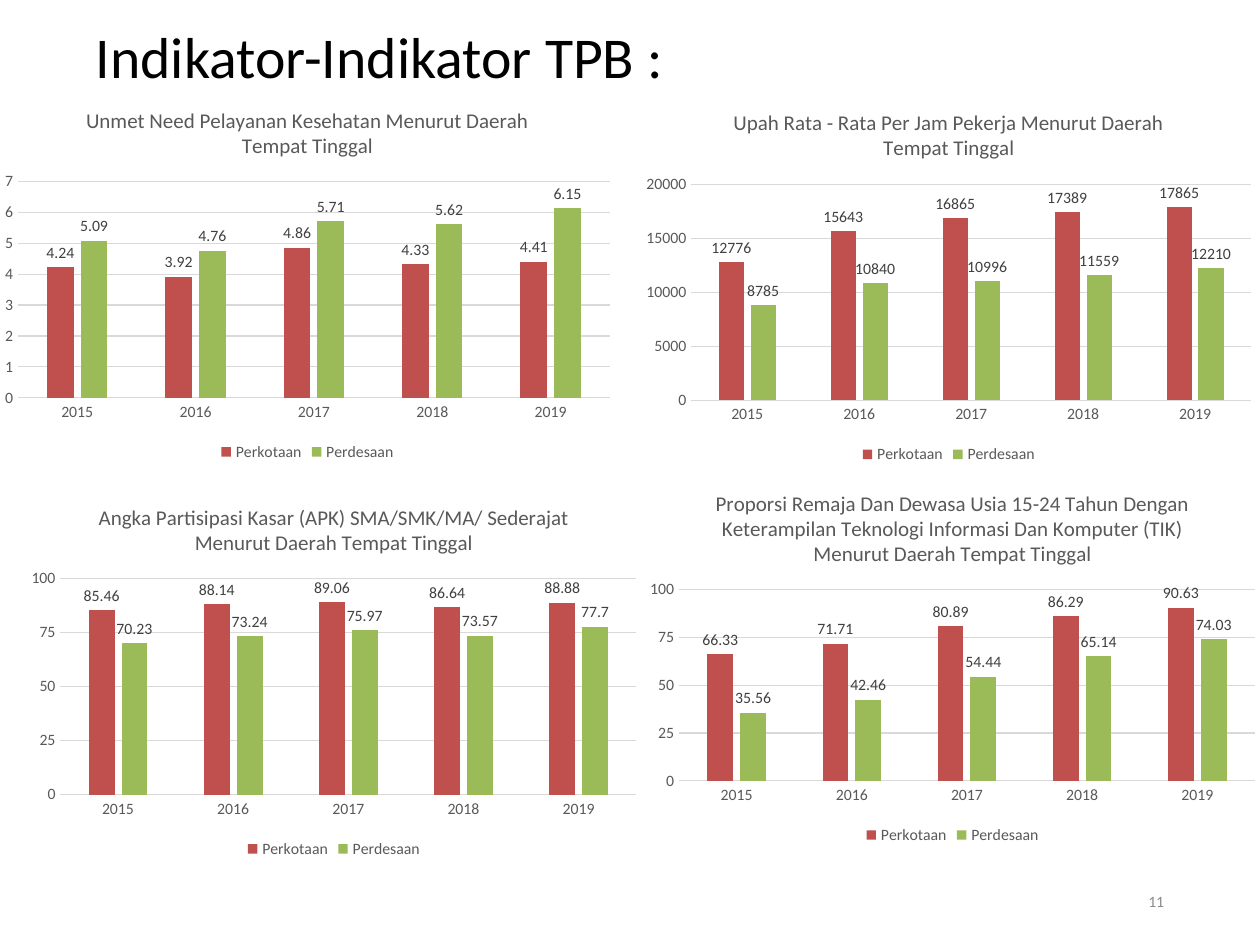
from pptx import Presentation
from pptx.chart.data import CategoryChartData
from pptx.dml.color import RGBColor
from pptx.enum.chart import XL_CHART_TYPE, XL_LABEL_POSITION, XL_LEGEND_POSITION, XL_TICK_MARK
from pptx.enum.text import MSO_ANCHOR, PP_ALIGN
from pptx.util import Inches, Pt

COLUMN_CHART = XL_CHART_TYPE.COLUMN_CLUSTERED
LABEL_OUTSIDE = XL_LABEL_POSITION.OUTSIDE_END
LEGEND_BOTTOM = XL_LEGEND_POSITION.BOTTOM
NO_TICK = XL_TICK_MARK.NONE
MIDDLE = MSO_ANCHOR.MIDDLE
LEFT, RIGHT = PP_ALIGN.LEFT, PP_ALIGN.RIGHT

BLACK = RGBColor(0x00, 0x00, 0x00)
LABEL_GRAY = RGBColor(0x40, 0x40, 0x40)
TEXT_GRAY = RGBColor(0x59, 0x59, 0x59)
NUMBER_GRAY = RGBColor(0x8C, 0x8C, 0x8C)
LINE_GRAY = RGBColor(0xD9, 0xD9, 0xD9)
RED = RGBColor(0xC0, 0x50, 0x4D)
GREEN = RGBColor(0x9B, 0xBB, 0x59)

FONT = "Calibri"
COLUMNS, ROWS = 100, 75
CHART_COLUMNS, CHART_ROWS = 50, 30
YEARS = ["2015", "2016", "2017", "2018", "2019"]
SERIES = [("Perkotaan", RED), ("Perdesaan", GREEN)]

# Column, row, title, axis maximum, axis step, urban values, rural values
CHARTS = [
    (-0.6, 7, "Unmet Need Pelayanan Kesehatan Menurut Daerah Tempat Tinggal", 7, 1,
     [4.24, 3.92, 4.86, 4.33, 4.41], [5.09, 4.76, 5.71, 5.62, 6.15]),
    (50.3, 7.2, "Upah Rata - Rata Per Jam Pekerja Menurut Daerah Tempat Tinggal", 20000, 5000,
     [12776, 15643, 16865, 17389, 17865], [8785, 10840, 10996, 11559, 12210]),
    (50.6, 37.4, "Proporsi Remaja Dan Dewasa Usia 15-24 Tahun Dengan Keterampilan "
     "Teknologi Informasi Dan Komputer (TIK) Menurut Daerah Tempat Tinggal", 100, 25,
     [66.33, 71.71, 80.89, 86.29, 90.63], [35.56, 42.46, 54.44, 65.14, 74.03]),
    (1.5, 38.5, "Angka Partisipasi Kasar (APK) SMA/SMK/MA/ Sederajat "
     "Menurut Daerah Tempat Tinggal", 100, 25,
     [85.46, 88.14, 89.06, 86.64, 88.88], [70.23, 73.24, 75.97, 73.57, 77.7]),
]


class SlideBuilder:
    def __init__(self, presentation):
        self.column = presentation.slide_width / COLUMNS
        self.row = presentation.slide_height / ROWS
        self.slide = presentation.slides.add_slide(presentation.slide_layouts[6])

    def place(self, column, row, columns, rows):
        return (round(column * self.column), round(row * self.row),
                round(columns * self.column), round(rows * self.row))

    def style_font(self, font, size, color):
        font.name = FONT
        font.size = Pt(size)
        font.bold = False
        font.color.rgb = color

    def style_line(self, line):
        line.color.rgb = LINE_GRAY
        line.width = Pt(0.75)

    def text(self, area, text, size, color, alignment=LEFT, spacing=1.0):
        frame = self.slide.shapes.add_textbox(*self.place(*area)).text_frame
        frame.word_wrap = True
        frame.vertical_anchor = MIDDLE
        frame.margin_left = frame.margin_right = Inches(0.07)
        frame.margin_top = frame.margin_bottom = Inches(0.04)
        paragraph = frame.paragraphs[0]
        paragraph.alignment = alignment
        paragraph.line_spacing = spacing
        run = paragraph.add_run()
        run.text = text
        self.style_font(run.font, size, color)

    def chart(self, column, row, title, maximum, step, *values):
        data = CategoryChartData()
        data.categories = YEARS
        for (name, _), numbers in zip(SERIES, values):
            data.add_series(name, numbers)
        area = self.place(column, row, CHART_COLUMNS, CHART_ROWS)
        chart = self.slide.shapes.add_chart(COLUMN_CHART, *area, data).chart
        self.style_font(chart.font, 10, BLACK)

        # Title and legend
        chart.has_title = True
        run = chart.chart_title.text_frame.paragraphs[0].add_run()
        run.text = title
        self.style_font(run.font, 12, TEXT_GRAY)
        chart.chart_title.include_in_layout = False
        chart.has_legend = True
        chart.legend.position = LEGEND_BOTTOM
        chart.legend.include_in_layout = False
        self.style_font(chart.legend.font, 9, TEXT_GRAY)

        # Axes
        for axis in (chart.category_axis, chart.value_axis):
            axis.major_tick_mark = axis.minor_tick_mark = NO_TICK
            self.style_font(axis.tick_labels.font, 9, TEXT_GRAY)
        self.style_line(chart.category_axis.format.line)
        value_axis = chart.value_axis
        value_axis.format.line.fill.background()
        value_axis.minimum_scale = 0
        value_axis.maximum_scale = maximum
        value_axis.major_unit = step
        self.style_line(value_axis.major_gridlines.format.line)

        # Bars and their values
        plot = chart.plots[0]
        plot.vary_by_categories = False
        plot.gap_width = 219
        plot.overlap = -27
        for series, (_, color) in zip(plot.series, SERIES):
            series.format.fill.solid()
            series.format.fill.fore_color.rgb = color
            labels = series.data_labels
            labels.show_value = True
            labels.position = LABEL_OUTSIDE
            self.style_font(labels.font, 9, LABEL_GRAY)


def main():
    presentation = Presentation()
    presentation.slide_width = Inches(10)
    presentation.slide_height = Inches(7.5)
    builder = SlideBuilder(presentation)

    # Heading and page number
    builder.text((6.9, 1.5, 86.2, 6.5), "Indikator-Indikator TPB :", 33, BLACK, spacing=0.9)
    builder.text((70.6, 69.5, 22.5, 4), "11", 9, NUMBER_GRAY, RIGHT)

    # Four indicators
    for indicator in CHARTS:
        builder.chart(*indicator)

    presentation.save("out.pptx")


if __name__ == "__main__":
    main()
